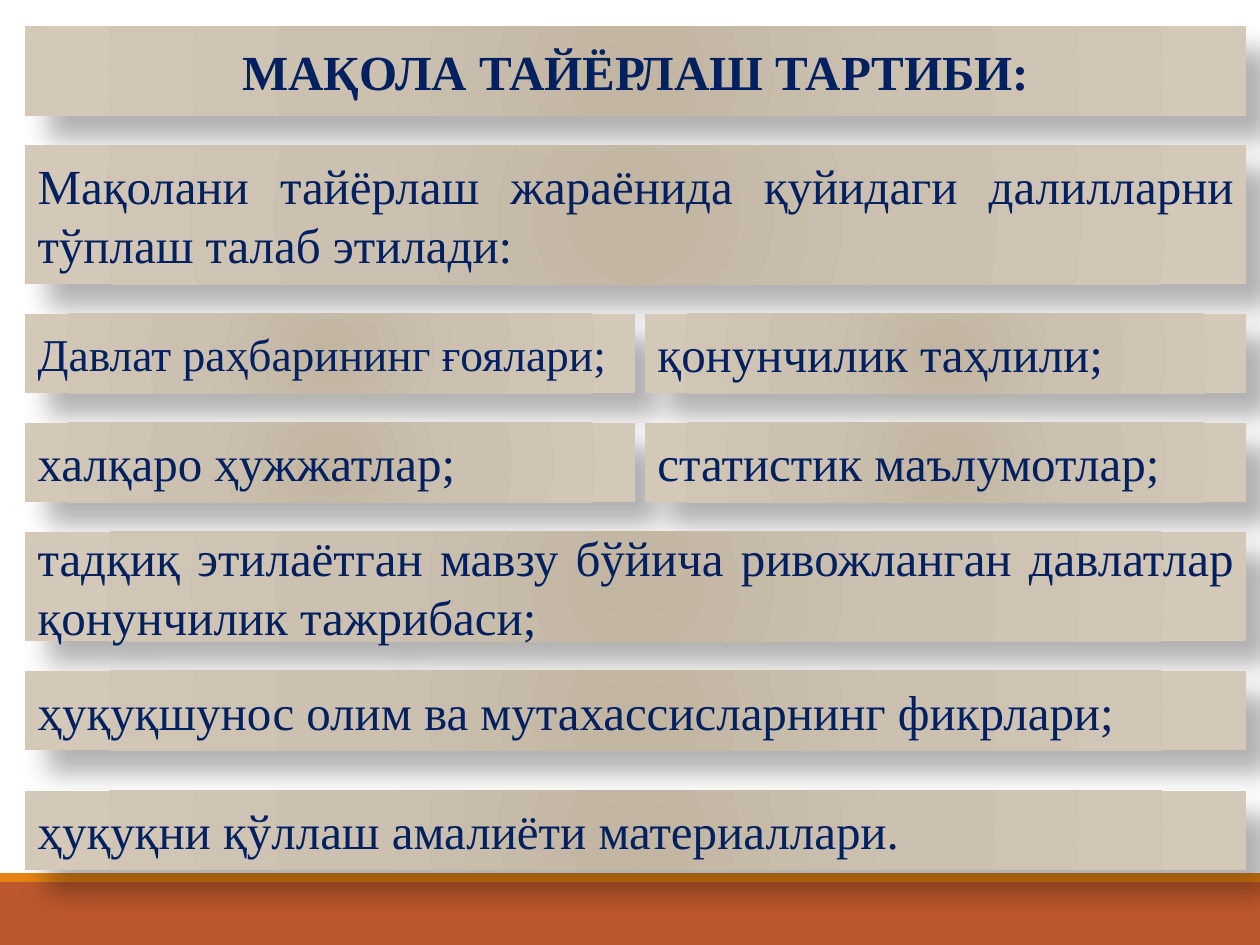
from lxml import etree
from pptx import Presentation
from pptx.dml.color import RGBColor
from pptx.enum.shapes import MSO_SHAPE
from pptx.enum.text import MSO_ANCHOR, MSO_AUTO_SIZE, PP_ALIGN
from pptx.oxml import parse_xml
from pptx.oxml.ns import qn
from pptx.util import Inches, Pt

RECT, ROUNDED = MSO_SHAPE.RECTANGLE, MSO_SHAPE.ROUNDED_RECTANGLE
MIDDLE, NO_FIT = MSO_ANCHOR.MIDDLE, MSO_AUTO_SIZE.NONE
CENTER, JUSTIFY = PP_ALIGN.CENTER, PP_ALIGN.JUSTIFY

COLORS = {
    "ink": "002060", "footer": "BD582C", "stripe": "E48312", "shadow": "000000",
    "inner": "C2B5A2", "middle": "CCC1B1", "outer": "D4C8B8",
}
FONT = "Times New Roman"
PAGE_WIDTH, PAGE_HEIGHT = 10, 7.5
LEFT, WIDTH, TOP = 0.2, 9.69, 0.21
COLUMN_GAP, ROW_GAP, LAST_GAP = 0.08, 0.235, 0.32
LEFT_COLUMN = 4.84
SINGLE = 0.63
A_NS = "http://schemas.openxmlformats.org/drawingml/2006/main"

TITLE, TITLE_HEIGHT = "МАҚОЛА ТАЙЁРЛАШ ТАРТИБИ:", 0.71

# Height, gap above, and (text, size) of each panel in the row
ROWS = [
    (1.1, ROW_GAP, [("Мақолани тайёрлаш жараёнида қуйидаги далилларни тўплаш талаб этилади:", 28)]),
    (SINGLE, ROW_GAP, [("Давлат раҳбарининг ғоялари;", 26), ("қонунчилик таҳлили;", 28)]),
    (SINGLE, ROW_GAP, [("халқаро ҳужжатлар;", 28), ("статистик маълумотлар;", 28)]),
    (0.87, ROW_GAP, [("тадқиқ этилаётган мавзу бўйича ривожланган давлатлар қонунчилик тажрибаси;", 28)]),
    (SINGLE, ROW_GAP, [("ҳуқуқшунос олим ва мутахассисларнинг фикрлари;", 28)]),
    (SINGLE, LAST_GAP, [("ҳуқуқни қўллаш амалиёти материаллари.", 28)]),
]


def place(shape, box):
    shape.left, shape.top, shape.width, shape.height = (Inches(v) for v in box)


def paint_panel(shape):
    """Radial beige fill, no outline and a soft shadow to the lower right."""
    shape.fill.gradient()
    shape.line.fill.background()
    shape.shadow.inherit = False
    properties = shape._element.spPr
    stops = "".join(
        f'<a:gs pos="{share * 1000}"><a:srgbClr val="{COLORS[name]}"/></a:gs>'
        for share, name in ((0, "inner"), (45, "middle"), (100, "outer")))
    radial = parse_xml(
        f'<a:gradFill xmlns:a="{A_NS}" rotWithShape="1"><a:gsLst>{stops}</a:gsLst>'
        '<a:path path="circle"><a:fillToRect l="100000" t="100000" r="100000" b="100000"/>'
        '</a:path></a:gradFill>')
    properties.replace(properties.find(qn("a:gradFill")), radial)
    shadow = etree.SubElement(
        properties.find(qn("a:effectLst")), qn("a:outerShdw"),
        blurRad=str(Pt(15)), dist=str(Pt(18)), dir=str(45 * 60000),
        algn="tl", rotWithShape="0")
    color = etree.SubElement(shadow, qn("a:srgbClr"), val=COLORS["shadow"])
    etree.SubElement(color, qn("a:alpha"), val="30000")


def write(shape, text, size, align, bold=False):
    frame = shape.text_frame
    frame.word_wrap = True
    frame.auto_size = NO_FIT
    frame.vertical_anchor = MIDDLE
    para = frame.paragraphs[0]
    para.alignment = align
    span = para.add_run()
    span.text = text
    span.font.name, span.font.size, span.font.bold = FONT, Pt(size), bold
    span.font.color.rgb = RGBColor.from_string(COLORS["ink"])


def add_footer(page, box):
    """Wide band with a thin stripe above it."""
    left, top, width, height = box
    stripe = 0.07
    bands = (("footer", top + stripe, height - stripe), ("stripe", top, stripe))
    for name, y, band_height in bands:
        band = page.shapes.add_shape(RECT, 0, 0, 0, 0)
        place(band, (left, y, width, band_height))
        band.shadow.inherit = False
        band.fill.solid()
        band.fill.fore_color.rgb = RGBColor.from_string(COLORS[name])
        band.line.fill.background()


def add_title(page, box):
    title = page.shapes.title
    place(title, box)
    paint_panel(title)
    write(title, TITLE, 28, CENTER, bold=True)


def add_row(page, box, cells):
    """One full-width panel, or two side by side."""
    left, top, width, height = box
    right = left + LEFT_COLUMN + COLUMN_GAP
    columns = [(left, width)]
    if len(cells) == 2:
        columns = [(left, LEFT_COLUMN), (right, left + width - right)]
    for (x, panel_width), (text, size) in zip(columns, cells):
        panel = page.shapes.add_shape(ROUNDED, 0, 0, 0, 0)
        panel.adjustments[0] = 0
        place(panel, (x, top, panel_width, height))
        paint_panel(panel)
        write(panel, text, size, JUSTIFY)


def main():
    deck = Presentation()
    deck.slide_width, deck.slide_height = Inches(PAGE_WIDTH), Inches(PAGE_HEIGHT)
    page = deck.slides.add_slide(deck.slide_layouts.get_by_name("Title Only"))

    add_footer(page, (0, 6.93, PAGE_WIDTH, PAGE_HEIGHT - 6.93))
    add_title(page, (LEFT, TOP, WIDTH, TITLE_HEIGHT))

    # Rows stacked below the title
    bottom = TOP + TITLE_HEIGHT
    for height, gap, cells in ROWS:
        add_row(page, (LEFT, bottom + gap, WIDTH, height), cells)
        bottom += gap + height

    deck.save("out.pptx")


if __name__ == "__main__":
    main()
